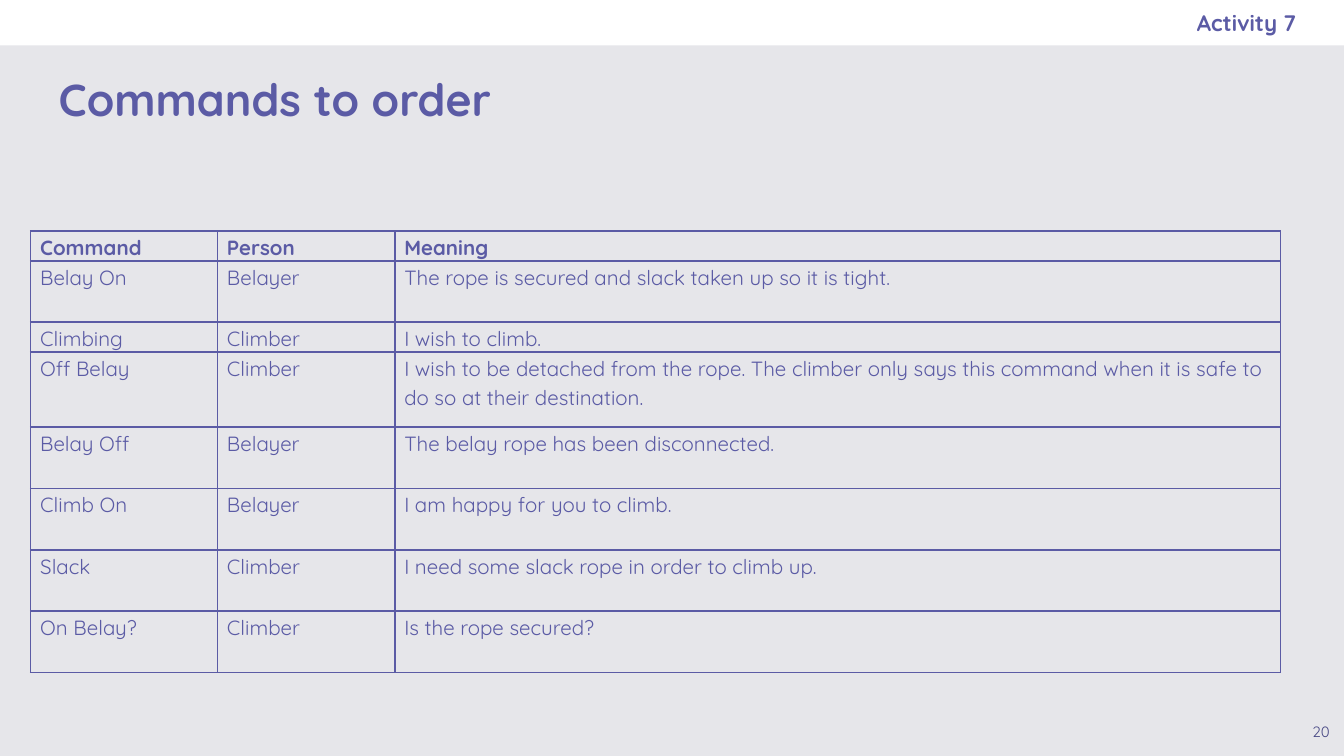
from lxml import etree
from pptx import Presentation
from pptx.dml.color import RGBColor
from pptx.enum.shapes import MSO_SHAPE
from pptx.enum.text import MSO_ANCHOR, MSO_AUTO_SIZE, PP_ALIGN
from pptx.oxml.ns import qn
from pptx.util import Cm, Pt

RECTANGLE = MSO_SHAPE.RECTANGLE
TOP, MIDDLE = MSO_ANCHOR.TOP, MSO_ANCHOR.MIDDLE
LEFT, CENTER, RIGHT = PP_ALIGN.LEFT, PP_ALIGN.CENTER, PP_ALIGN.RIGHT
NO_AUTOFIT = MSO_AUTO_SIZE.NONE

TITLE_ONLY = 5
FONT = "Quicksand"
PURPLE, DARK_PURPLE = "5B5BA5", "494985"
WHITE, PALE_GREY = "FFFFFF", "E6E6EA"
INSET = 0.25
BANNER_HEIGHT = 0.86

COLUMN_WIDTHS = [3.53, 3.35, 16.74]
SHORT_ROW, NORMAL_ROW, TALL_ROW = 0.56, 1.16, 1.42
COMMANDS = [
    (SHORT_ROW, "Command", "Person", "Meaning"),
    (NORMAL_ROW, "Belay On", "Belayer",
     "The rope is secured and slack taken up so it is tight."),
    (SHORT_ROW, "Climbing", "Climber", "I wish to climb."),
    (TALL_ROW, "Off Belay", "Climber",
     "I wish to be detached from the rope. The climber only says this "
     "command when it is safe to do so at their destination."),
    (NORMAL_ROW, "Belay Off", "Belayer", "The belay rope has been disconnected."),
    (NORMAL_ROW, "Climb On", "Belayer", "I am happy for you to climb."),
    (NORMAL_ROW, "Slack", "Climber", "I need some slack rope in order to climb up."),
    (NORMAL_ROW, "On Belay?", "Climber", "Is the rope secured?"),
]


def color(value):
    return RGBColor.from_string(value)


def paint(fill, value):
    fill.solid()
    fill.fore_color.rgb = color(value)


def write(frame, text, size=11, bold=False, fill=PURPLE, align=LEFT, spacing=1.0):
    para = frame.paragraphs[0]
    para.alignment = align
    para.line_spacing = spacing
    span = para.add_run()
    span.text = text
    span.font.name = FONT
    span.font.size = Pt(size)
    span.font.bold = bold
    span.font.color.rgb = color(fill)


def set_frame(frame, anchor=TOP, right=INSET, wrap=True):
    frame.auto_size = NO_AUTOFIT
    frame.word_wrap = wrap
    frame.vertical_anchor = anchor
    frame.margin_left = frame.margin_top = frame.margin_bottom = Cm(INSET)
    frame.margin_right = Cm(right)


def add_banner(page, width):
    banner = page.shapes.add_shape(RECTANGLE, 0, 0, width, Cm(BANNER_HEIGHT))
    banner.shadow.inherit = False
    paint(banner.fill, WHITE)
    banner.line.fill.background()


def set_title(page, text):
    title = page.shapes.title
    title.left, title.top = Cm(0.86), Cm(0.89)
    title.width, title.height = Cm(23.67), Cm(1.93)
    set_frame(title.text_frame, anchor=MIDDLE)
    write(title.text_frame, text, size=24, bold=True)


def add_text(page, left, top, width, height, text, anchor=TOP, right=INSET,
             wrap=True, **text_format):
    box = page.shapes.add_textbox(Cm(left), Cm(top), Cm(width), Cm(height))
    set_frame(box.text_frame, anchor, right, wrap)
    write(box.text_frame, text, **text_format)


def set_borders(cell):
    properties = cell._tc.get_or_add_tcPr()
    for side in ("a:lnL", "a:lnR", "a:lnT", "a:lnB"):
        line = etree.SubElement(properties, qn(side), w=str(Pt(1)))
        fill = etree.SubElement(line, qn("a:solidFill"))
        etree.SubElement(fill, qn("a:srgbClr"), val=PURPLE)


def fill_cell(cell, text, bold):
    cell.margin_left = cell.margin_right = Cm(0.18)
    cell.margin_top = cell.margin_bottom = 0
    cell.vertical_anchor = TOP
    set_borders(cell)
    cell.fill.background()
    write(cell.text_frame, text, bold=bold, spacing=1.15)


def add_command_table(page):
    height = sum(row[0] for row in COMMANDS)
    table = page.shapes.add_table(
        len(COMMANDS), len(COLUMN_WIDTHS), Cm(0.58), Cm(4.37),
        Cm(sum(COLUMN_WIDTHS)), Cm(height)).table
    table.horz_banding = False
    for column, width in zip(table.columns, COLUMN_WIDTHS):
        column.width = Cm(width)
    for index, (row_height, *texts) in enumerate(COMMANDS):
        row = table.rows[index]
        row.height = Cm(row_height)
        for cell, text in zip(row.cells, texts):
            fill_cell(cell, text, bold=index == 0)


def main():
    deck = Presentation()
    deck.slide_width, deck.slide_height = Cm(25.4), Cm(14.29)
    page = deck.slides.add_slide(deck.slide_layouts[TITLE_ONLY])
    paint(page.background.fill, PALE_GREY)
    add_banner(page, deck.slide_width)
    set_title(page, "Commands to order")
    add_text(page, 24.54, 13.41, 0.86, 0.86, "20", wrap=False,
             size=8, fill=DARK_PURPLE, align=CENTER)
    add_text(page, 14.6, 0, 9.9, BANNER_HEIGHT, "Activity 7", anchor=MIDDLE,
             right=0, size=12, bold=True, align=RIGHT)
    add_command_table(page)
    deck.save("out.pptx")


if __name__ == "__main__":
    main()
